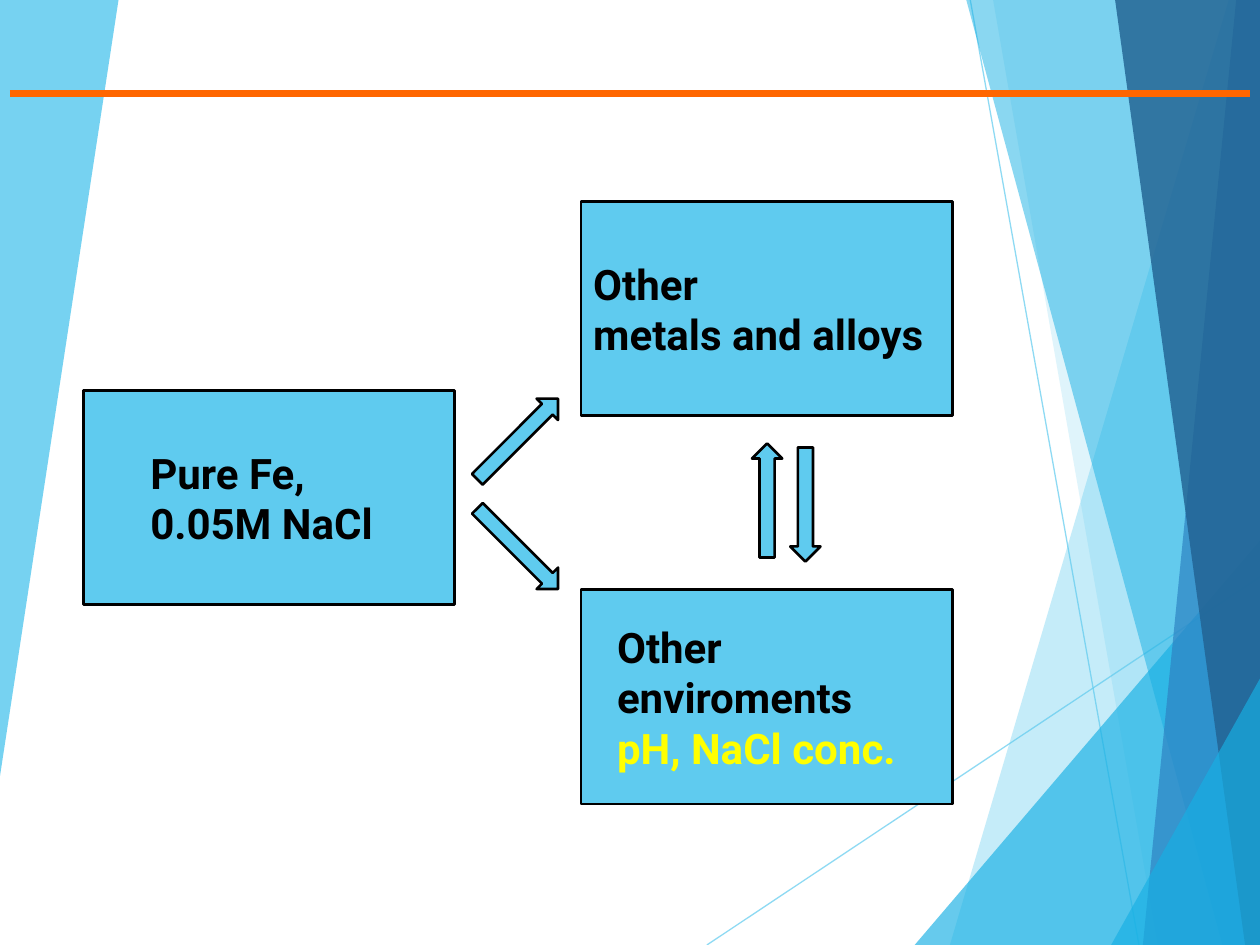
from dataclasses import dataclass
from typing import NamedTuple

from lxml import etree
from pptx import Presentation
from pptx.dml.color import RGBColor
from pptx.enum.shapes import MSO_CONNECTOR, MSO_SHAPE
from pptx.enum.text import MSO_ANCHOR, PP_ALIGN
from pptx.oxml.ns import qn
from pptx.util import Cm, Pt

STRAIGHT = MSO_CONNECTOR.STRAIGHT
RECTANGLE = MSO_SHAPE.RECTANGLE
UP_ARROW = MSO_SHAPE.UP_ARROW
MIDDLE = MSO_ANCHOR.MIDDLE
LEFT = PP_ALIGN.LEFT

WIDTH, HEIGHT = 25.4, 19.05
BOX_WIDTH, BOX_HEIGHT = 7.49, 4.32
ARROW_WIDTH, ARROW_HEIGHT = 0.61, 2.3


@dataclass(frozen=True)
class Theme:
    sky: str = "5FCBEF"
    cyan: str = "17B0E4"
    blue: str = "2E83C3"
    navy: str = "226292"
    orange: str = "FF6600"
    black: str = "000000"
    yellow: str = "FFFF00"
    font: str = "Roboto"
    text_size: float = 24
    outline: float = 1.5
    hairline: float = 0.75
    rule: float = 4


THEME = Theme()


class Facet(NamedTuple):
    points: list[tuple[float, float]]
    color: str
    opacity: int


class Rule(NamedTuple):
    start: tuple[float, float]
    end: tuple[float, float]
    color: str
    weight: float
    opacity: int = 100


class Box(NamedTuple):
    left: float
    top: float
    inset: float
    lines: list[tuple[str, str]]


class Arrow(NamedTuple):
    left: float
    top: float
    rotation: int


def right_facet(top_x: float, bottom_x: float, color: str, opacity: int) -> Facet:
    """Full-height facet between a slanted edge and the right slide edge."""
    points = [(top_x, 0), (bottom_x, HEIGHT), (WIDTH, HEIGHT), (WIDTH, 0)]
    return Facet(points, color, opacity)


def corner_facet(bottom_x: float, right_y: float) -> Facet:
    """Triangle in the bottom right corner."""
    points = [(bottom_x, HEIGHT), (WIDTH, right_y), (WIDTH, HEIGHT)]
    return Facet(points, THEME.cyan, 66)


RULES = [
    Rule((14.25, HEIGHT), (WIDTH, 11.63), THEME.sky, THEME.hairline, 70),
    Rule((19.56, 0), (22.96, HEIGHT), THEME.sky, THEME.hairline, 70),
]
FACETS = [
    right_facet(24.77, 19.15, THEME.sky, 36),
    right_facet(20.02, 23.34, THEME.sky, 20),
    corner_facet(18.44, 10.9),
    right_facet(19.48, 24.64, THEME.cyan, 50),
    right_facet(24.92, 23.04, THEME.blue, 70),
    right_facet(22.48, 25.1, THEME.navy, 82),
    corner_facet(22.4, 13.68),
    Facet([(0, 0), (2.39, 0), (0, 15.65)], THEME.sky, 85),
]
HEADER_RULE = Rule((0.2, 1.88), (25.2, 1.88), THEME.orange, THEME.rule)
BOXES = [
    Box(1.68, 7.87, 1.35, [("Pure Fe, 0.05M NaCl", THEME.black)]),
    Box(11.71, 4.06, 0.25, [("Other", THEME.black), ("metals and alloys", THEME.black)]),
    Box(11.71, 11.89, 0.73, [("Other enviroments", THEME.black), ("pH, NaCl conc.", THEME.yellow)]),
]
ARROWS = [
    Arrow(15.16, 8.94, 0),
    Arrow(15.93, 9.02, 180),
    Arrow(10.13, 7.7, 45),
    Arrow(10.13, 9.91, 135),
]


def set_opacity(shape, opacity: int) -> None:
    color = next(shape._element.spPr.iter(qn("a:srgbClr")))
    etree.SubElement(color, qn("a:alpha"), val=str(opacity * 1000))


def draw_rule(slide, rule: Rule) -> None:
    ends = [Cm(value) for value in rule.start + rule.end]
    line = slide.shapes.add_connector(STRAIGHT, *ends)
    line.line.color.rgb = RGBColor.from_string(rule.color)
    line.line.width = Pt(rule.weight)
    etree.SubElement(line._element.spPr, qn("a:effectLst"))
    if rule.opacity < 100:
        set_opacity(line, rule.opacity)


def draw_facet(slide, facet: Facet) -> None:
    first, *others = [(Cm(x), Cm(y)) for x, y in facet.points]
    builder = slide.shapes.build_freeform(*first)
    builder.add_line_segments(others)
    shape = builder.convert_to_shape()
    shape.shadow.inherit = False
    shape.fill.solid()
    shape.fill.fore_color.rgb = RGBColor.from_string(facet.color)
    shape.line.fill.background()
    set_opacity(shape, facet.opacity)


def add_outlined(slide, preset, left: float, top: float, width: float, height: float):
    """Add a sky-blue preset shape with a black outline."""
    shape = slide.shapes.add_shape(preset, Cm(left), Cm(top), Cm(width), Cm(height))
    shape.shadow.inherit = False
    shape.fill.solid()
    shape.fill.fore_color.rgb = RGBColor.from_string(THEME.sky)
    shape.line.color.rgb = RGBColor.from_string(THEME.black)
    shape.line.width = Pt(THEME.outline)
    return shape


def write_text(para, text: str, *, color: str, size: float = THEME.text_size,
               bold: bool = True, align=LEFT) -> None:
    para.alignment = align
    span = para.add_run()
    span.text = text
    span.font.name = THEME.font
    span.font.size = Pt(size)
    span.font.bold = bold
    span.font.color.rgb = RGBColor.from_string(color)


def draw_box(slide, box: Box) -> None:
    shape = add_outlined(slide, RECTANGLE, box.left, box.top, BOX_WIDTH, BOX_HEIGHT)
    frame = shape.text_frame
    frame.word_wrap = True
    frame.vertical_anchor = MIDDLE
    frame.margin_left = frame.margin_right = Cm(box.inset)
    for index, (text, color) in enumerate(box.lines):
        para = frame.add_paragraph() if index else frame.paragraphs[0]
        write_text(para, text, color=color)


def draw_arrow(slide, arrow: Arrow) -> None:
    shape = add_outlined(slide, UP_ARROW, arrow.left, arrow.top, ARROW_WIDTH, ARROW_HEIGHT)
    shape.rotation = arrow.rotation


def main() -> None:
    deck = Presentation()
    deck.slide_width, deck.slide_height = Cm(WIDTH), Cm(HEIGHT)
    page = deck.slides.add_slide(deck.slide_layouts[6])
    for rule in RULES:
        draw_rule(page, rule)
    for facet in FACETS:
        draw_facet(page, facet)
    draw_rule(page, HEADER_RULE)
    for arrow in ARROWS:
        draw_arrow(page, arrow)
    for box in BOXES:
        draw_box(page, box)
    deck.save("out.pptx")


if __name__ == "__main__":
    main()
